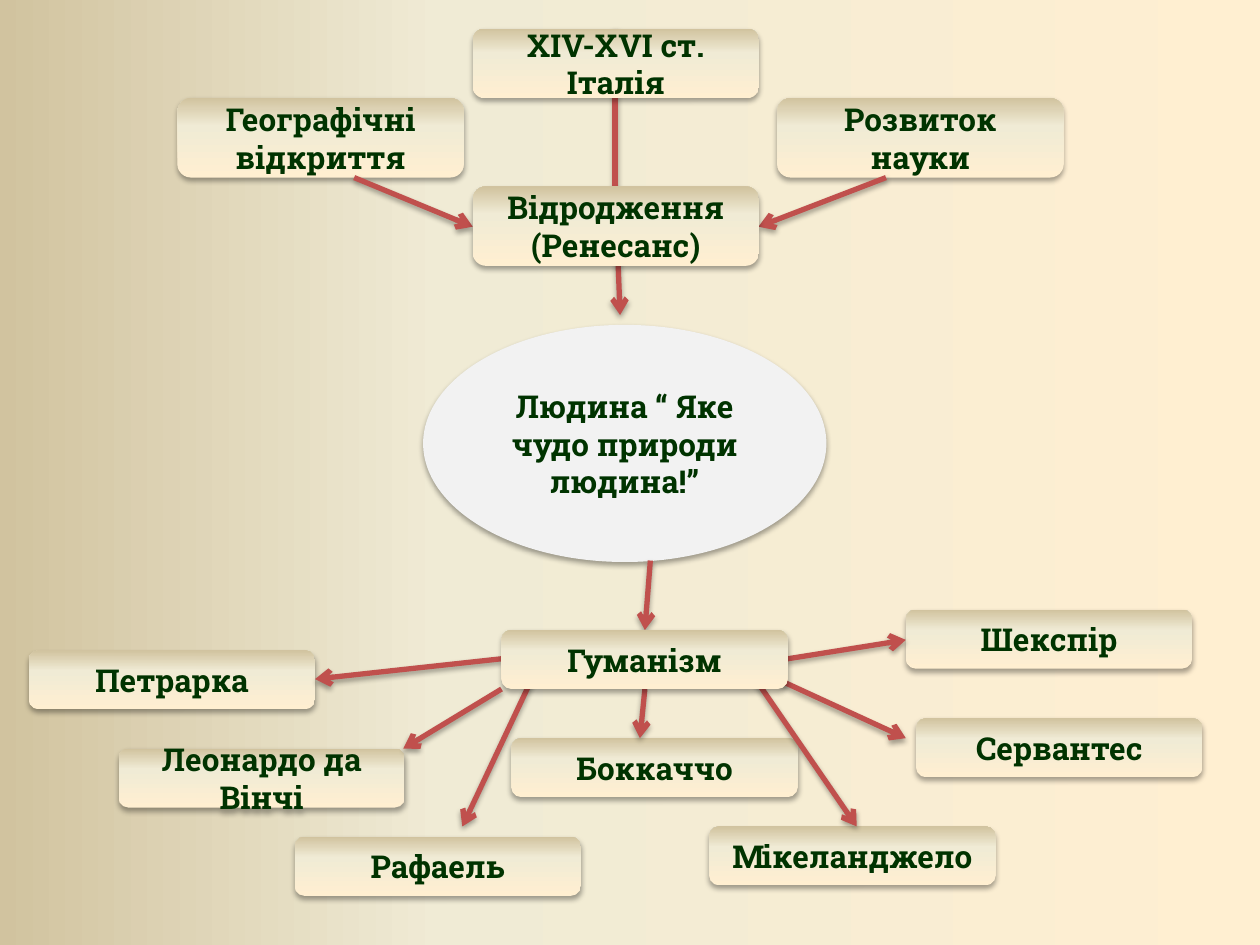
import copy
import pptx
import pptx.dml.color
import pptx.enum.shapes
import pptx.enum.text
import pptx.oxml
import pptx.oxml.ns
import pptx.util

Cm = pptx.util.Cm
Pt = pptx.util.Pt
qn = pptx.oxml.ns.qn
rgb = pptx.dml.color.RGBColor.from_string
kinds = pptx.enum.shapes.MSO_SHAPE
space = pptx.oxml.ns.nsdecls("a")
stops = [(0, "FFEFD1"), (65, "F0EBD5"), (100, "D1C39F")]
marks = "".join(
    f'<a:gs pos="{pos * 1000}"><a:srgbClr val="{tone}"/></a:gs>' for pos, tone in stops
)
shade = pptx.oxml.parse_xml(
    f'<a:effectLst {space}><a:outerShdw blurRad="{Pt(3.1)}" dist="{Pt(1.8)}" '
    'dir="5400000" rotWithShape="0"><a:srgbClr val="000000">'
    '<a:alpha val="35000"/></a:srgbClr></a:outerShdw></a:effectLst>'
)
tip = pptx.oxml.parse_xml(f'<a:tailEnd {space} type="arrow"/>')

deck = pptx.Presentation()
deck.slide_width = Cm(25.4)
deck.slide_height = Cm(19.05)
slide = deck.slides.add_slide(deck.slide_layouts[6])


def fade(fill, root, angle):
    fill.gradient()
    old = next(root.iter(qn("a:gradFill")))
    new = pptx.oxml.parse_xml(
        f'<a:gradFill {space} rotWithShape="1"><a:gsLst>{marks}</a:gsLst>'
        f'<a:lin ang="{angle * 60000}" scaled="0"/></a:gradFill>'
    )
    old.getparent().replace(old, new)


def box(text, left, top, high, wide=5.77, kind=kinds.ROUNDED_RECTANGLE):
    shape = slide.shapes.add_shape(kind, Cm(left), Cm(top), Cm(wide), Cm(high))
    shape.line.fill.background()
    if kind == kinds.OVAL:
        shape.fill.solid()
        shape.fill.fore_color.rgb = rgb("F2F2F2")
    else:
        fade(shape.fill, shape.element, 270)
    frame = shape.text_frame
    frame.word_wrap = True
    frame.vertical_anchor = pptx.enum.text.MSO_ANCHOR.MIDDLE
    frame.text = text
    para = frame.paragraphs[0]
    para.alignment = pptx.enum.text.PP_ALIGN.CENTER
    para.font.name = "Roboto Slab"
    para.font.size = Pt(18)
    para.font.bold = True
    para.font.color.rgb = rgb("003300")


fade(slide.background.fill, slide.element, 180)

box("Людина “ Яке чудо природи людина!”", 8.53, 6.55, 4.78, 8.13, kinds.OVAL)
for text, left, top in [
    ("Географічні відкриття", 3.58, 1.98),
    ("Розвиток науки", 15.67, 1.98),
]:
    box(text, left, top, 1.6)
for text, left, top in [
    ("Шекспір", 18.26, 12.29),
    ("Сервантес", 18.47, 14.48),
    ("Мікеланджело", 14.3, 16.66),
    ("Боккаччо", 10.31, 14.88),
    ("Рафаель", 5.94, 16.87),
    ("Леонардо да Вінчі", 2.39, 15.09),
    ("Петрарка", 0.58, 13.11),
]:
    box(text, left, top, 1.19)

for *ends, arrow in [
    (12.4, 3.76, 12.5, 6.35, True),
    (17.86, 3.58, 15.29, 4.57, True),
    (12.4, 0.58, 12.4, 3.76, False),
    (13.11, 11.3, 13, 12.7, True),
    (13, 13.89, 12.9, 14.88, True),
    (10.11, 13.28, 6.35, 13.69, True),
    (10.11, 13.89, 8.13, 15.09, True),
    (10.72, 13.69, 9.32, 16.66, True),
    (15.09, 13.49, 17.27, 16.66, True),
    (15.67, 13.69, 18.26, 14.88, True),
    (15.88, 13.28, 18.26, 12.9, True),
    (7.14, 3.58, 9.53, 4.57, True),
]:
    line = slide.shapes.add_connector(
        pptx.enum.shapes.MSO_CONNECTOR.STRAIGHT, *map(Cm, ends)
    )
    line.line.color.rgb = rgb("C0504D")
    line.line.width = Pt(3)
    if arrow:
        line.element.spPr.find(qn("a:ln")).append(copy.deepcopy(tip))

box("XIV-XVI ст. Італія", 9.53, 0.58, 1.4)
box("Відродження (Ренесанс)", 9.53, 3.76, 1.6)
box("Гуманізм", 10.11, 12.7, 1.19)

for shape in slide.shapes:
    shape.element.spPr.append(copy.deepcopy(shade))

deck.save("out.pptx")
